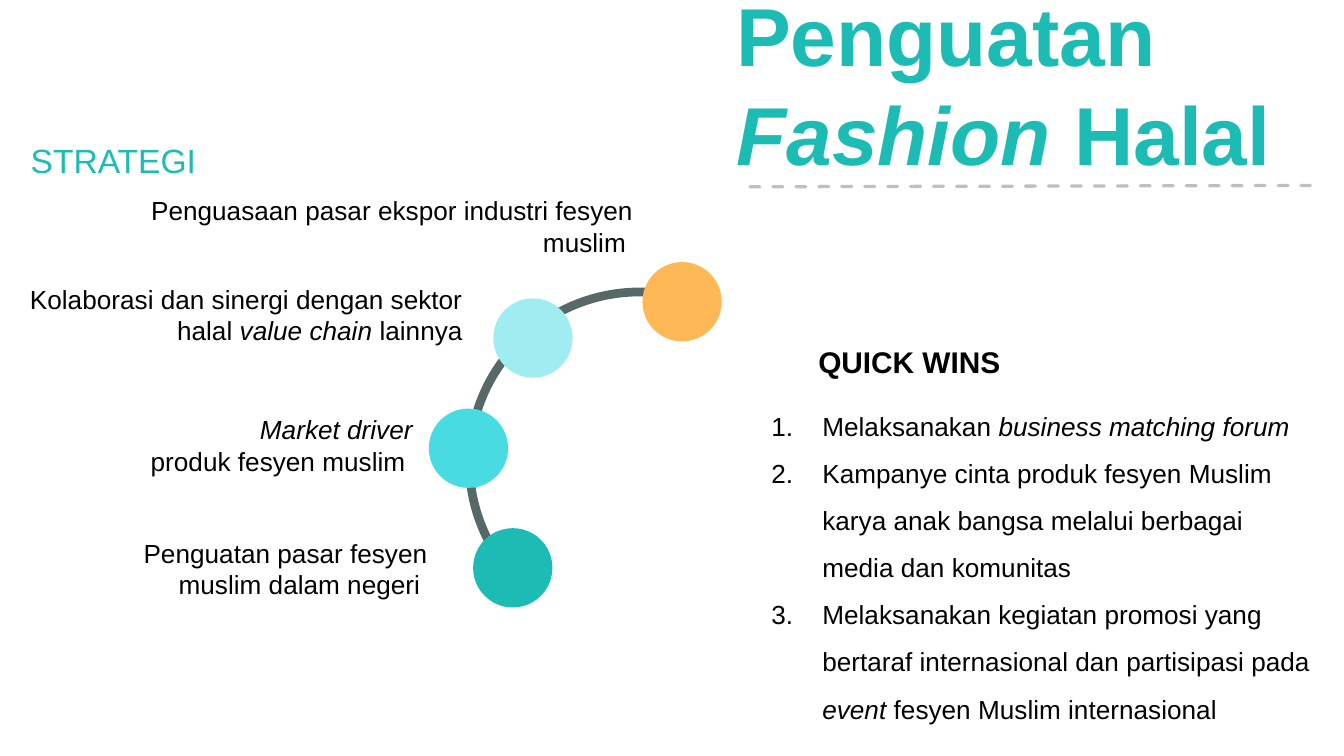
from lxml import etree
from pptx import Presentation
from pptx import util as u
from pptx.dml.color import RGBColor
from pptx.enum import dml, shapes, text
from pptx.oxml.ns import qn

WIDTH = 10
HEIGHT = WIDTH * 9 / 16
TEAL, BLACK, GREY = "1CBBB4", "000000", "BEBFBF"
LEFT, RIGHT = text.PP_ALIGN.LEFT, text.PP_ALIGN.RIGHT
JUSTIFY = text.PP_ALIGN.JUSTIFY
MIDDLE, TOP = text.MSO_ANCHOR.MIDDLE, text.MSO_ANCHOR.TOP

# Content: asterisks enclose italic words
TITLE = ["Penguatan", "*Fashion* Halal"]
STRATEGY_HEADING = ["STRATEGI"]
QUICK_HEADING = ["QUICK WINS"]
QUICK_WINS = [
    "Melaksanakan *business matching forum*",
    "Kampanye cinta produk fesyen Muslim karya anak bangsa melalui berbagai media dan komunitas",
    "Melaksanakan kegiatan promosi yang bertaraf internasional dan partisipasi pada "
    "*event *fesyen Muslim internasional",
]
# Each strategy: lines, label (left, top, width), dot (left, top), dot colour
STRATEGIES = [
    (["Penguasaan pasar ekspor industri fesyen muslim "],
     (0.93, 1.4, 3.88), (4.78, 1.95), "FEB856"),
    (["Kolaborasi dan sinergi dengan sektor halal *value chain *lainnya"],
     (-0.18, 2.06, 3.72), (3.67, 2.22), "9FEDF0"),
    (["*Market driver*", "produk fesyen muslim "],
     (-0.11, 3.03, 3.28), (3.19, 3.04), "48DCE2"),
    (["Penguatan pasar fesyen muslim dalam negeri "],
     (0.46, 3.95, 2.82), (3.52, 3.93), TEAL),
]
DOT, LABEL_HEIGHT = 0.59, 0.57
ARC = dict(box=(3.46, 2.14, 2.6, 2.6), rotation=285, adjust=(128.16, 215.48, 0.025))


def color(value):
    return RGBColor.from_string(value)


def inches(values):
    return [u.Inches(value) for value in values]


def add_solid(slide, kind, box, fill):
    solid = slide.shapes.add_shape(kind, *inches(box))
    solid.shadow.inherit = False
    solid.fill.solid()
    solid.fill.fore_color.rgb = color(fill)
    solid.line.fill.background()
    return solid


def add_text(slide, lines, box, size=14, ink=BLACK, bold=False, align=LEFT, anchor=TOP):
    frame = slide.shapes.add_textbox(*inches(box)).text_frame
    frame.word_wrap = True
    frame.auto_size = text.MSO_AUTO_SIZE.SHAPE_TO_FIT_TEXT
    frame.vertical_anchor = anchor
    font_format = dict(name="Arial", size=u.Pt(size), bold=bold)
    for index, line in enumerate(lines):
        paragraph = frame.add_paragraph() if index else frame.paragraphs[0]
        paragraph.alignment = align
        for part, words in enumerate(line.split("*")):
            if not words:
                continue
            run = paragraph.add_run()
            run.text = words
            for key, value in font_format.items():
                setattr(run.font, key, value)
            run.font.italic = part % 2 == 1
            run.font.color.rgb = color(ink)
    return frame


def number_paragraphs(frame, indent, spacing):
    for paragraph in frame.paragraphs:
        paragraph.line_spacing = spacing
        properties = paragraph._p.get_or_add_pPr()
        properties.set("marL", str(u.Inches(indent)))
        properties.set("indent", str(-u.Inches(indent)))
        etree.SubElement(properties, qn("a:buFont"), typeface="+mj-lt")
        etree.SubElement(properties, qn("a:buAutoNum"), type="arabicPeriod")


def main():
    deck = Presentation()
    deck.slide_width, deck.slide_height = inches((WIDTH, HEIGHT))
    slide = deck.slides.add_slide(deck.slide_layouts[6])

    # Arc behind the dots
    arc = add_solid(slide, shapes.MSO_SHAPE.BLOCK_ARC, ARC["box"], "576868")
    arc.rotation = ARC["rotation"]
    for index, value in enumerate(ARC["adjust"]):
        arc.adjustments[index] = value

    # Strategy dots and labels
    for lines, label, dot, fill in STRATEGIES:
        add_solid(slide, shapes.MSO_SHAPE.OVAL, (*dot, DOT, DOT), fill)
        add_text(slide, lines, (*label, LABEL_HEIGHT), align=RIGHT)

    # Quick wins
    quick_wins = add_text(slide, QUICK_WINS, (5.64, 2.89, 4.22, 2.57))
    number_paragraphs(quick_wins, indent=0.38, spacing=1.5)
    add_text(slide, QUICK_HEADING, (5.99, 2.51, 3.88, 0.37), size=16, bold=True)

    # Headings and dashed rule
    add_text(slide, STRATEGY_HEADING, (0.13, 0.99, 4.45, 0.4), size=18, ink=TEAL, anchor=MIDDLE)
    add_text(slide, TITLE, (5.38, -0.17, 4.62, 1.58), size=44, ink=TEAL, bold=True,
             align=JUSTIFY, anchor=MIDDLE)
    rule = slide.shapes.add_connector(shapes.MSO_CONNECTOR.STRAIGHT,
                                      *inches((5.58, 1.39, 9.75, 1.38)))
    rule.line.color.rgb = color(GREY)
    rule.line.width = u.Pt(1.75)
    rule.line.dash_style = dml.MSO_LINE.DASH
    rule.line._get_or_add_ln().set("cap", "rnd")
    etree.SubElement(rule._element.spPr, qn("a:effectLst"))

    deck.save("out.pptx")


if __name__ == "__main__":
    main()
